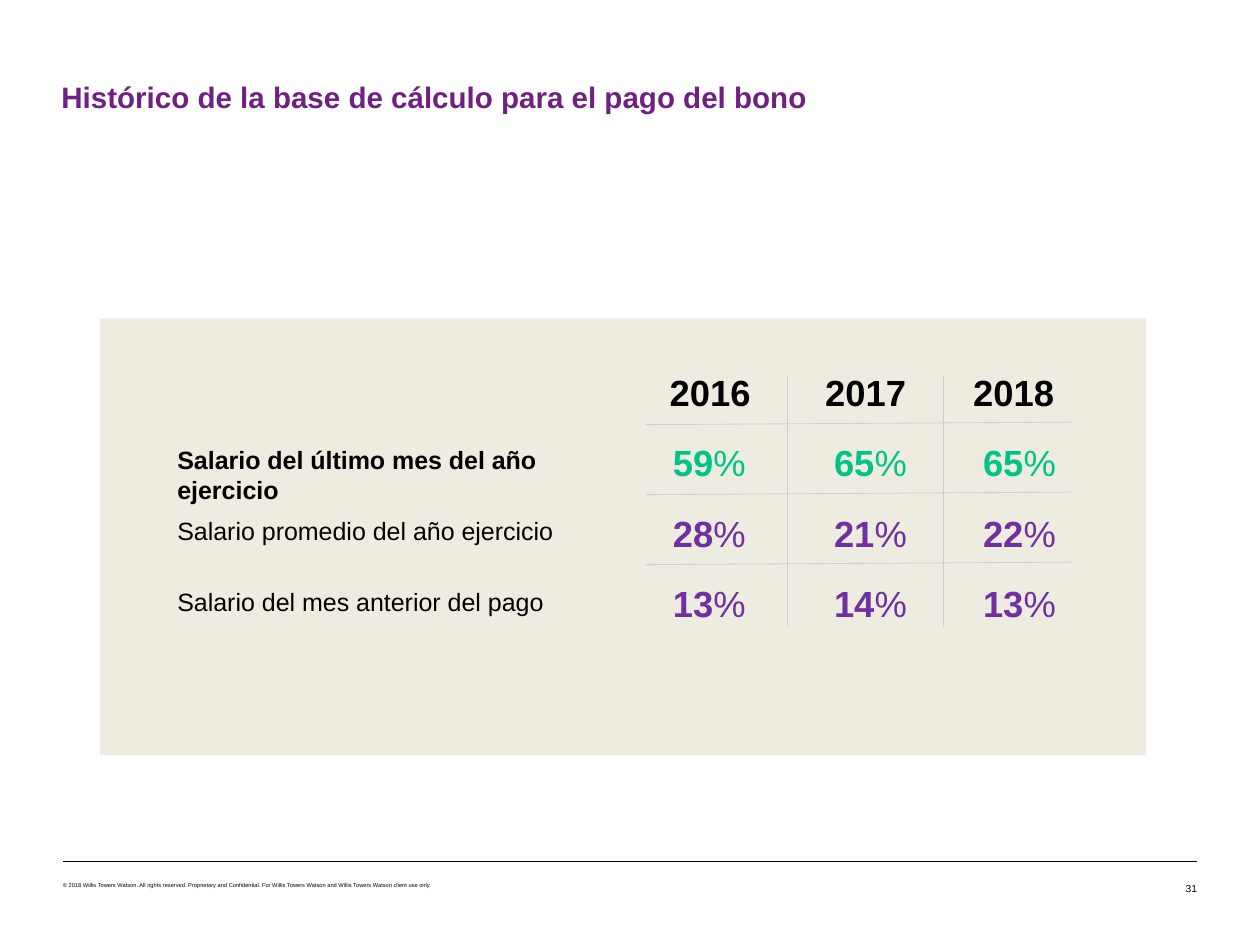
from pptx import Presentation
from pptx.dml.color import RGBColor
from pptx.enum import shapes, text
from pptx.oxml import ns, xmlchemy
from pptx.util import Pt

# Content
TITLE = "Histórico de la base de cálculo para el pago del bono"
YEARS = ["2016", "2017", "2018"]
ROWS = [
    ("Salario del último mes del año ejercicio", [59, 65, 65]),
    ("Salario promedio del año ejercicio", [28, 21, 22]),
    ("Salario del mes anterior del pago", [13, 14, 13]),
]
NOTICE = ("© 2018 Willis Towers Watson. All rights reserved. Proprietary and "
          "Confidential. For Willis Towers Watson and Willis Towers Watson "
          "client use only.")
PAGE = "31"

COLORS = {"title": "702082", "panel": "EEECE1", "black": "000000",
          "top": "00C387", "rest": "7030A0", "grid": "CCD0D6"}
LEFT, CENTER, RIGHT = (text.PP_ALIGN.LEFT, text.PP_ALIGN.CENTER,
                       text.PP_ALIGN.RIGHT)

# Layout, in points
WIDTH, HEIGHT = 1108.8, 831.6
YEAR_MID = [625, 761.8, 892.1]
VALUE_MID = [624.2, 766, 897.1]
YEAR_TOP, ROW_TOP, ROW_STEP = 321.8, 383.8, 62.1
COL_LINES = [692.6, 830.2]
RULE_TOP, RULE_STEP, RULE_RISE = 373.7, 61.6, 2.2

deck = Presentation()
deck.slide_width, deck.slide_height = Pt(WIDTH), Pt(HEIGHT)
slide = deck.slides.add_slide(deck.slide_layouts[5])


def color(name):
    return RGBColor.from_string(COLORS[name])


def write(words, *, box, size, tint="black", bold=False, align=LEFT,
          inset=(7.2, 3.6), anchor=text.MSO_ANCHOR.TOP, tail="", shape=None):
    """Put words, and an optional regular-weight tail, in a box."""
    box = [Pt(n) for n in box]
    if shape is None:
        shape = slide.shapes.add_textbox(*box)
    else:
        shape.left, shape.top, shape.width, shape.height = box
    frame = shape.text_frame
    frame.word_wrap = True
    frame.auto_size = text.MSO_AUTO_SIZE.NONE
    frame.vertical_anchor = anchor
    frame.margin_left = frame.margin_right = Pt(inset[0])
    frame.margin_top = frame.margin_bottom = Pt(inset[1])
    par = frame.paragraphs[0]
    par.alignment = align
    for part, heavy in ((words, bold), (tail, False)):
        if part:
            run = par.add_run()
            run.text = part
            run.font.name, run.font.size = "Arial", Pt(size)
            run.font.bold = heavy
            run.font.color.rgb = color(tint)


def draw(x1, y1, x2, y2, tint="grid", weight=0.75):
    line = slide.shapes.add_connector(
        shapes.MSO_CONNECTOR.STRAIGHT, Pt(x1), Pt(y1), Pt(x2), Pt(y2))
    line.line.color.rgb = color(tint)
    line.line.width = Pt(weight)
    line._element.spPr.append(xmlchemy.OxmlElement("a:effectLst"))


# Panel and title
panel = slide.shapes.add_shape(
    shapes.MSO_SHAPE.RECTANGLE, Pt(87.8), Pt(280.1), Pt(920.9), Pt(384.5))
panel.shadow.inherit = False
panel.fill.solid()
panel.fill.fore_color.rgb = color("panel")
panel.line.fill.background()
write(TITLE, box=(46.8, 62.6, 702.7, 44.6), size=26, tint="title", bold=True,
      anchor=text.MSO_ANCHOR.MIDDLE, shape=slide.shapes.title)

# Years
for year, mid in zip(YEARS, YEAR_MID):
    write(year, box=(mid - 44, YEAR_TOP, 88, 46), size=32, bold=True,
          align=CENTER)

# Rows: label, then one share for each year
for i, (label, shares) in enumerate(ROWS):
    top = ROW_TOP + i * ROW_STEP
    first = i == 0
    write(label, box=(149, top + 4.2, 409 if first else 354,
                      60.5 if first else 34.6), size=22, bold=first)
    for share, mid in zip(shares, VALUE_MID):
        write(str(share), tail="%", box=(mid - 49, top, 98, 46), size=32,
              tint="top" if first else "rest", bold=True, align=CENTER)

# Grid lines
for x in COL_LINES:
    draw(x, 330.5, x, 552.2)
for i in range(len(ROWS)):
    y = RULE_TOP + i * RULE_STEP
    draw(568.1, y, 942.5, y - RULE_RISE)

# Footer
draw(55.4, 757.4, 1053.4, 757.4, tint="black", weight=0.25)
write(NOTICE, box=(55.4, 776.2, 640, 5.8), size=5, inset=(0, 0))
write(PAGE, box=(1007.3, 776.2, 46.1, 10.8), size=9, align=RIGHT,
      inset=(0, 0))

deck.save("out.pptx")
